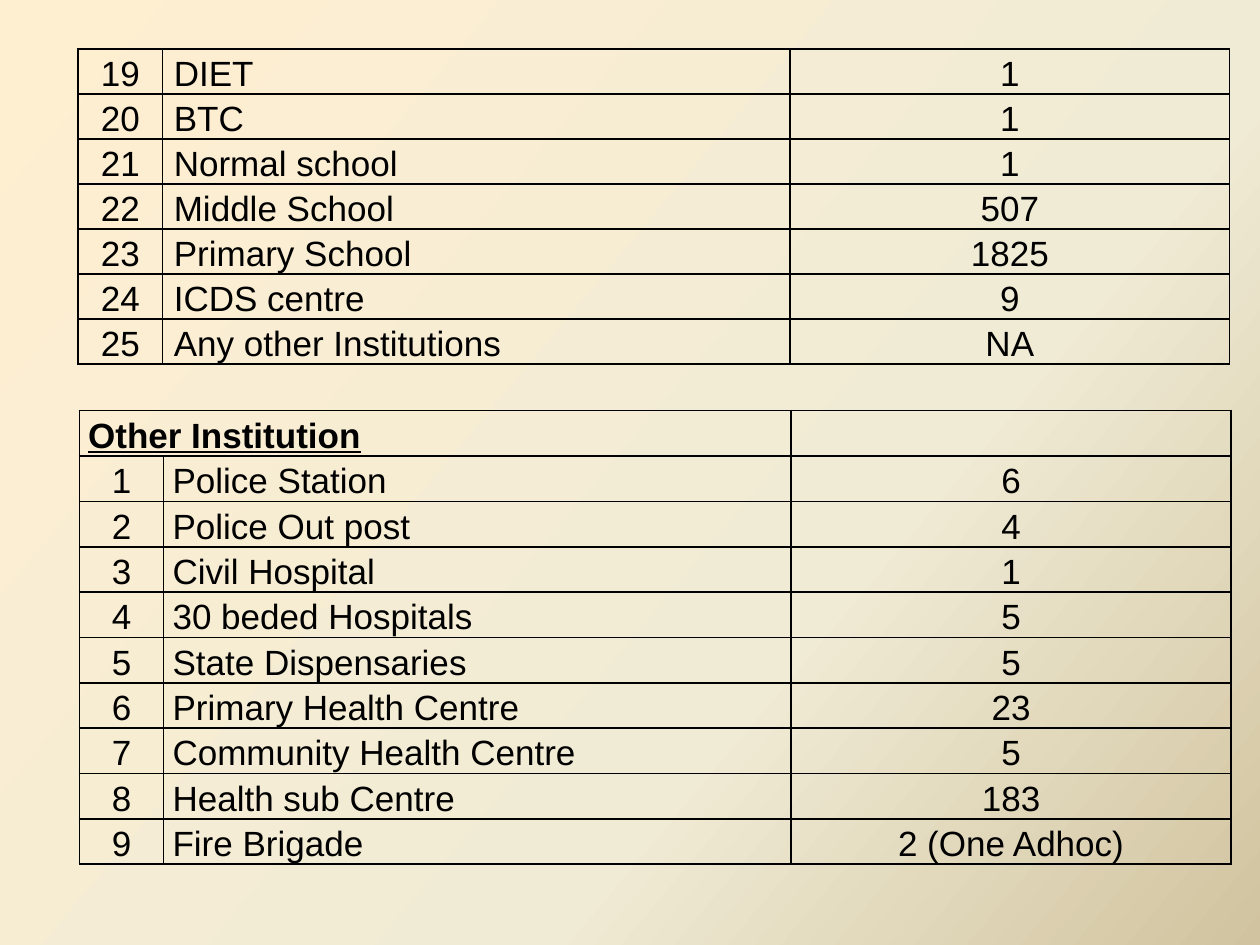
from copy import deepcopy
from dataclasses import dataclass

from lxml.etree import SubElement
from pptx import Presentation
from pptx.dml.color import RGBColor as Rgb
from pptx.enum.text import MSO_ANCHOR as Anchor, PP_ALIGN as Align
from pptx.oxml.ns import qn
from pptx.slide import Slide
from pptx.table import _Cell as Cell
from pptx.util import Inches, Pt


@dataclass(frozen=True)
class Theme:
    font: str = "Arial"
    size: Pt = Pt(20)
    spacing: float = 1.15
    ink: str = "000000"
    border: Pt = Pt(1)
    gradient: tuple = ((0, "FFEFD1"), (0.65, "F0EBD5"), (1, "D1C39F"))
    gradient_angle: int = 320


@dataclass(frozen=True)
class Listing:
    left: float
    top: float
    row_height: float
    side_margin: float
    first_number: int
    entries: tuple[tuple[str, str], ...]
    heading: str = ""


THEME = Theme()
COLUMN_WIDTHS = (0.67, 4.98, 3.49)
COLUMN_ALIGNS = (Align.CENTER, Align.LEFT, Align.CENTER)

LISTINGS = (
    Listing(0.62, 0.39, 0.35, 0.09, 19, (
        ("DIET", "1"),
        ("BTC", "1"),
        ("Normal school", "1"),
        ("Middle School", "507"),
        ("Primary School", "1825"),
        ("ICDS centre", "9"),
        ("Any other Institutions", "NA"),
    )),
    Listing(0.63, 3.26, 0.36, 0.07, 1, (
        ("Police Station", "6"),
        ("Police Out post", "4"),
        ("Civil Hospital", "1"),
        ("30 beded Hospitals", "5"),
        ("State Dispensaries", "5"),
        ("Primary Health Centre", "23"),
        ("Community Health Centre", "5"),
        ("Health sub Centre", "183"),
        ("Fire Brigade", "2 (One Adhoc)"),
    ), "Other Institution"),
)


def paint_background(slide: Slide) -> None:
    """Fill the background with the theme's three-stop gradient."""
    fill = slide.background.fill
    fill.gradient()
    fill.gradient_angle = THEME.gradient_angle
    stops = slide.element.find(".//" + qn("a:gsLst"))
    stops.append(deepcopy(stops[-1]))
    for stop, (position, color) in zip(fill.gradient_stops, THEME.gradient):
        stop.position = position
        stop.color.rgb = Rgb.from_string(color)


def add_borders(cell: Cell) -> None:
    """Draw a solid line on all four sides of a cell."""
    properties = cell._tc.get_or_add_tcPr()
    for side in ("a:lnL", "a:lnR", "a:lnT", "a:lnB"):
        line = SubElement(properties, qn(side), w=str(THEME.border))
        solid = SubElement(line, qn("a:solidFill"))
        SubElement(solid, qn("a:srgbClr"), val=THEME.ink)


def write_cell(cell: Cell, text: str, align: Align, side_margin: float, heading: bool) -> None:
    """Set the text, type and frame of one cell."""
    add_borders(cell)
    cell.fill.background()
    cell.vertical_anchor = Anchor.MIDDLE
    cell.margin_left = cell.margin_right = Inches(side_margin)
    cell.margin_top = cell.margin_bottom = 0
    cell.text = text
    paragraph = cell.text_frame.paragraphs[0]
    paragraph.alignment = align
    paragraph.line_spacing = THEME.spacing
    font = paragraph.font
    font.name, font.size = THEME.font, THEME.size
    font.color.rgb = Rgb.from_string(THEME.ink)
    font.bold = font.underline = heading


def draw_listing(slide: Slide, listing: Listing) -> None:
    """Add a numbered table, with a merged heading row if it has one."""
    rows = [(str(number), *entry) for number, entry in enumerate(listing.entries, listing.first_number)]
    if listing.heading:
        rows.insert(0, (listing.heading, "", ""))
    table = slide.shapes.add_table(
        len(rows), len(COLUMN_WIDTHS), Inches(listing.left), Inches(listing.top),
        Inches(sum(COLUMN_WIDTHS)), Inches(listing.row_height * len(rows)),
    ).table
    table.first_row = table.horz_banding = False
    for column, width in zip(table.columns, COLUMN_WIDTHS):
        column.width = Inches(width)
    for row_index, texts in enumerate(rows):
        heading = bool(listing.heading) and row_index == 0
        for column_index, (text, align) in enumerate(zip(texts, COLUMN_ALIGNS)):
            write_cell(table.cell(row_index, column_index), text,
                       Align.LEFT if heading else align, listing.side_margin, heading)
    if listing.heading:
        table.cell(0, 0).merge(table.cell(0, 1))


def main() -> None:
    """Build the slide and save it."""
    deck = Presentation()
    deck.slide_width, deck.slide_height = Inches(10), Inches(7.5)
    slide = deck.slides.add_slide(deck.slide_layouts[6])
    paint_background(slide)
    for listing in LISTINGS:
        draw_listing(slide, listing)
    deck.save("out.pptx")


if __name__ == "__main__":
    main()
